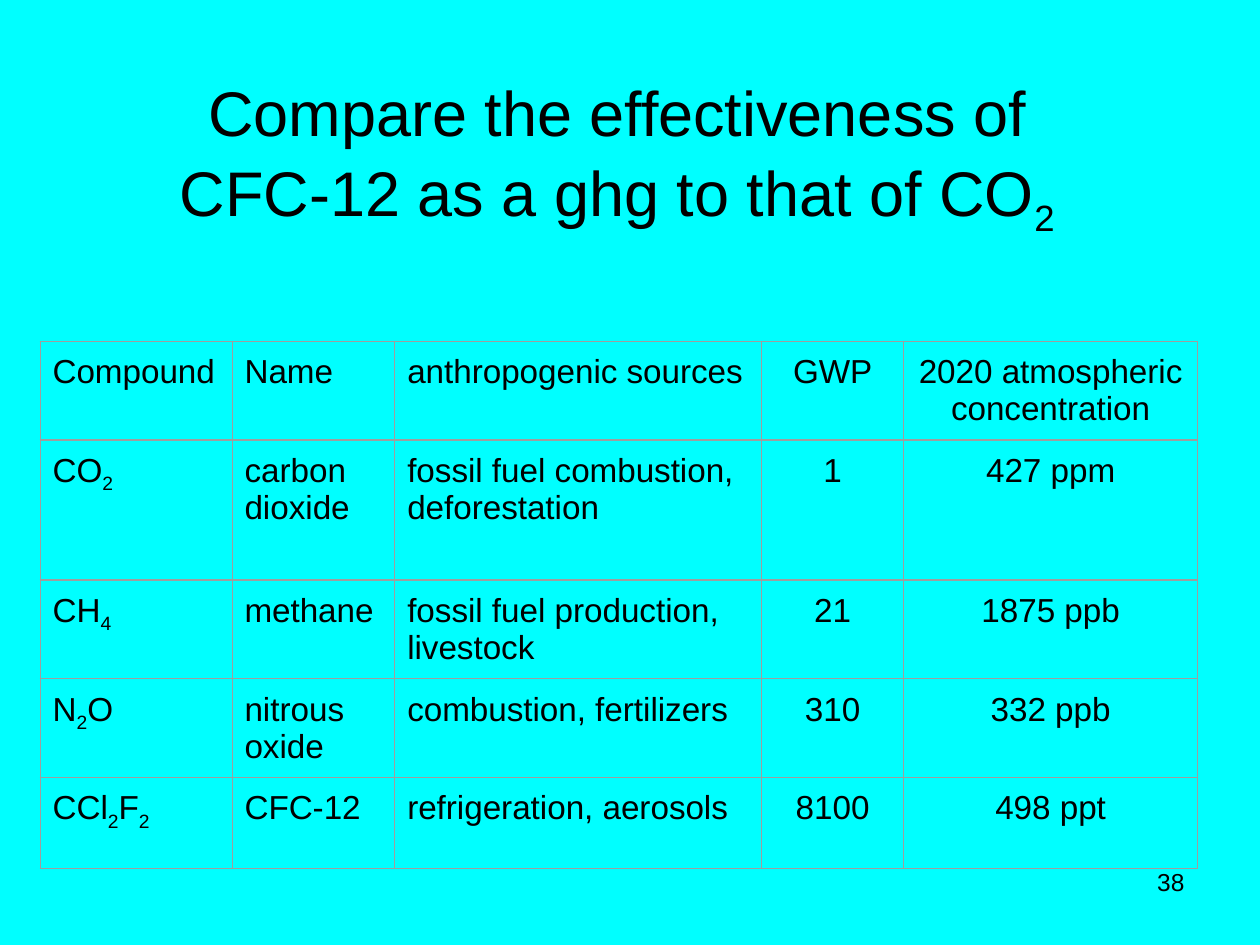
from dataclasses import dataclass

from lxml import etree
from pptx import Presentation
from pptx.dml.color import RGBColor
from pptx.enum import text
from pptx.oxml import ns
from pptx.util import Cm, Pt


@dataclass(frozen=True)
class Theme:
    """Colours, font and type sizes of the slide."""
    back: RGBColor = RGBColor(0, 255, 255)
    ink: RGBColor = RGBColor(0, 0, 0)
    rule: str = "9E9E9E"
    rule_width: int = Pt(0.75)
    font: str = "Arial"
    title: int = Pt(36)
    body: int = Pt(19)
    number: int = Pt(14)


THEME = Theme()
LEFT, CENTER, RIGHT = text.PP_ALIGN.LEFT, text.PP_ALIGN.CENTER, text.PP_ALIGN.RIGHT
TITLE = "Compare the effectiveness of CFC-12 as a ghg to that of CO|2"
COLUMNS = [(3.87, LEFT), (3.28, LEFT), (7.39, LEFT), (2.87, CENTER), (5.92, CENTER)]
ROW_HEIGHTS = [1.83, 2.82, 1.83, 1.83, 1.83]
ROWS = [
    ("Compound", "Name", "anthropogenic sources", "GWP", "2020 atmospheric concentration"),
    ("CO|2", "carbon dioxide", "fossil fuel combustion, deforestation", "1", "427 ppm"),
    ("CH|4", "methane", "fossil fuel production, livestock", "21", "1875 ppb"),
    ("N|2|O", "nitrous oxide", "combustion, fertilizers", "310", "332 ppb"),
    ("CCl|2|F|2", "CFC-12", "refrigeration, aerosols", "8100", "498 ppt"),
]


def write(tf, content, size, align):
    """Write one paragraph in which every second part between bars is a subscript."""
    p = tf.paragraphs[0]
    p.alignment = align
    for i, part in enumerate(content.split("|")):
        r = p.add_run()
        r.text = part
        r.font.name, r.font.size = THEME.font, size
        r.font.color.rgb = THEME.ink
        if i % 2:
            r._r.get_or_add_rPr().set("baseline", "-25000")
    return p


def place_text(s, box, content, size, align):
    """Fit a text shape to its box and fill it from the top."""
    s.left, s.top, s.width, s.height = box
    tf = s.text_frame
    tf.word_wrap = True
    tf.auto_size = text.MSO_AUTO_SIZE.NONE
    tf.vertical_anchor = text.MSO_ANCHOR.TOP
    tf.margin_left = tf.margin_right = Cm(0.25)
    tf.margin_top = tf.margin_bottom = Cm(0.13)
    return write(tf, content, size, align)


def add_title(s, box):
    """Place the indented title in its placeholder."""
    p = place_text(s.shapes.title, box, TITLE, THEME.title, CENTER)
    p.line_spacing = 1.05
    p.space_before = Pt(0)
    pPr = p._p.get_or_add_pPr()
    pPr.set("marL", str(Cm(0.97)))
    pPr.set("indent", "0")


def rule_cell(cell):
    """Draw a thin line on all four sides of a cell."""
    tcPr = cell._tc.get_or_add_tcPr()
    for i, side in enumerate(("lnL", "lnR", "lnT", "lnB")):
        ln = etree.Element(ns.qn(f"a:{side}"), w=str(THEME.rule_width))
        fill = etree.SubElement(ln, ns.qn("a:solidFill"))
        etree.SubElement(fill, ns.qn("a:srgbClr"), val=THEME.rule)
        tcPr.insert(i, ln)


def add_gas_table(s, box):
    """Add the table of greenhouse gases."""
    table = s.shapes.add_table(len(ROWS), len(COLUMNS), *box).table
    table.first_row = table.horz_banding = False
    for column, (width, _) in zip(table.columns, COLUMNS):
        column.width = Cm(width)
    for row, height, values in zip(table.rows, ROW_HEIGHTS, ROWS):
        row.height = Cm(height)
        for cell, value, (_, align) in zip(row.cells, values, COLUMNS):
            cell.margin_left = cell.margin_right = Cm(0.25)
            cell.margin_top = cell.margin_bottom = Cm(0.25)
            cell.fill.background()
            rule_cell(cell)
            write(cell.text_frame, value, THEME.body, align)


def add_number(s, box):
    """Add the page number at the lower right."""
    place_text(s.shapes.add_textbox(*box), box, "38", THEME.number, RIGHT)


def main():
    """Build the slide and save it."""
    prs = Presentation()
    prs.slide_width, prs.slide_height = Cm(25.4), Cm(19.05)
    s = prs.slides.add_slide(prs.slide_layouts[5])
    s.background.fill.solid()
    s.background.fill.fore_color.rgb = THEME.back
    add_title(s, (Cm(1.9), Cm(1.27), Cm(20.12), Cm(3.84)))
    add_number(s, (Cm(18.21), Cm(17.35), Cm(5.92), Cm(1.32)))
    width = sum(w for w, _ in COLUMNS)
    add_gas_table(s, (Cm(0.81), Cm(6.88), Cm(width), Cm(sum(ROW_HEIGHTS))))
    prs.save("out.pptx")


if __name__ == "__main__":
    main()
